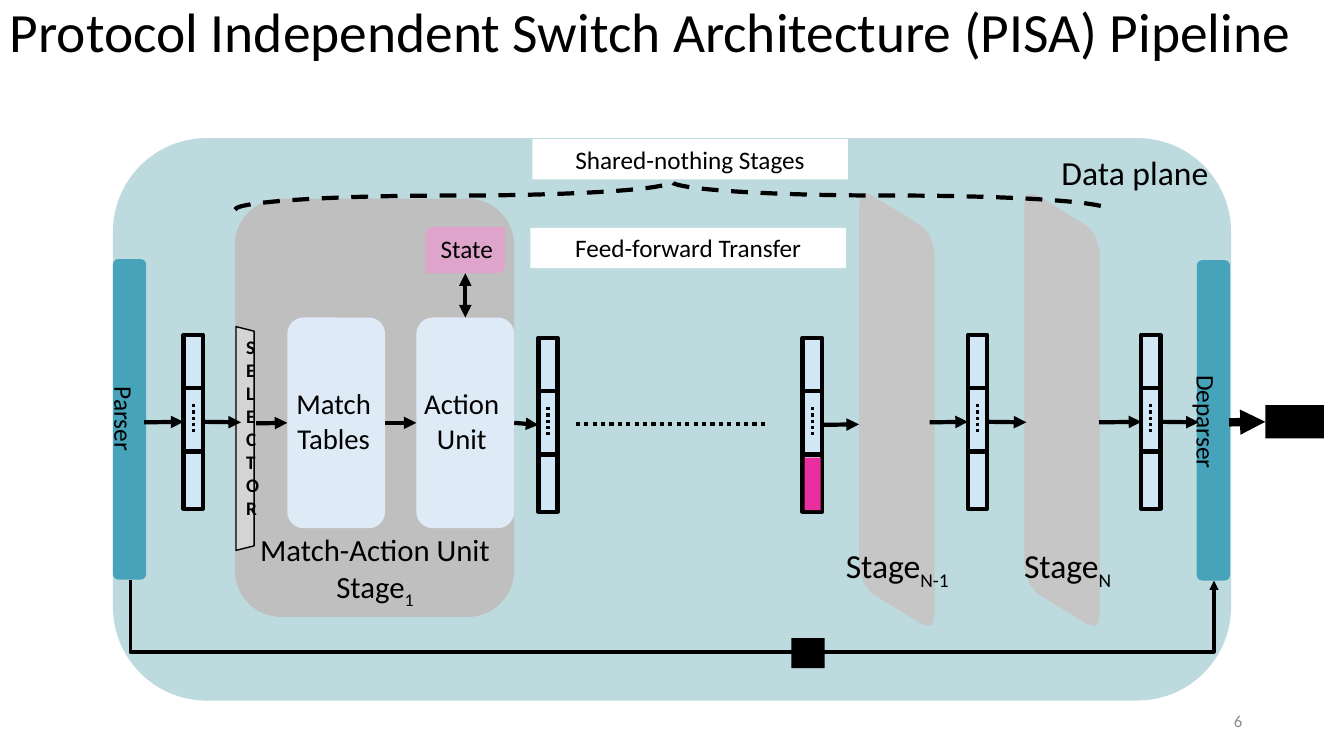
from pptx import Presentation
from pptx.dml.color import RGBColor
from pptx.enum.dml import MSO_LINE
from pptx.enum.shapes import MSO_CONNECTOR, MSO_SHAPE
from pptx.enum.text import MSO_ANCHOR, PP_ALIGN
from pptx.oxml.ns import qn
from pptx.util import Inches, Pt
from lxml.etree import SubElement

THEME = {
    "font": "Calibri",
    "ink": "000000", "paper": "FFFFFF", "note": "8C8C8C",
    "plane": "BDDADF", "edge": "47A3BA", "stage": "BFBFBF", "slab": "C6C6C6",
    "unit": "DEEBF7", "cell": "D1E7F6", "state": "FF8AD8", "mark": "EA2E9E",
    "title": 39.6, "end": 31.3, "large": 24, "mau": 22, "body": 20.5,
    "label": 18, "letter": 13.7, "small": 12,
    "thin": 1, "dots": 2.25, "line": 3, "thick": 6,
}
ROUND = MSO_SHAPE.FLOWCHART_ALTERNATE_PROCESS
RECT = MSO_SHAPE.RECTANGLE
TOP, LEFT, BOTTOM, RIGHT = range(4)

# name, preset, (left, top, width, height), fill
BLOCKS = [
    ("plane", MSO_SHAPE.ROUNDED_RECTANGLE, (1.12, 1.37, 11.09, 5.58), "plane"),
    ("parser", ROUND, (1.12, 2.57, 0.33, 3.18), "edge"),
    ("deparser", ROUND, (11.87, 2.58, 0.33, 3.18), "edge"),
    ("stage", ROUND, (2.33, 1.97, 2.77, 4.15), "stage"),
    ("state", MSO_SHAPE.ROUND_2_DIAG_RECTANGLE, (4.22, 2.25, 0.79, 0.46), "state"),
    ("match", ROUND, (2.85, 3.15, 0.97, 2.09), "unit"),
    ("action", ROUND, (4.13, 3.15, 0.97, 2.09), "unit"),
    ("selector", MSO_SHAPE.TRAPEZOID, (1.32, 4.26, 2.22, 0.18), "paper"),
    ("shared", RECT, (5.28, 1.38, 3.13, 0.4), "paper"),
    ("forward", RECT, (5.26, 2.26, 3.13, 0.4), "paper"),
    ("packet", RECT, (12.55, 4.02, 0.58, 0.33), "ink"),
]
SLABS = [8.52, 10.16]
OUTLINE = [(0, 0.1), (0.03, 0.01), (0.08, 0), (0.13, 0.02), (0.62, 0.32),
           (0.7, 0.41), (0.75, 0.57), (0.75, 4.16), (0.73, 4.27),
           (0.69, 4.29), (0.62, 4.27), (0.13, 3.97), (0.05, 3.87), (0, 3.72)]
HEADERS = {"h1": (1.82, 3.32), "h2": (5.34, 3.35), "h3": (7.96, 3.35),
           "h4": (9.6, 3.32), "h5": (11.32, 3.32)}
HEADER = (0.19, 1.73)
SPLITS = (0.53, 1.16)
DOTS = (0.69, 1.0)

# text, subscript, (left, top, width, height), size, rotation
TEXTS = [
    ("Data plane", "", (10.43, 1.46, 1.84, 0.5), "large", 0),
    ("Stage", "N-1", (8.02, 5.36, 1.76, 0.5), "large", 0),
    ("Stage", "N", (9.71, 5.36, 1.76, 0.5), "large", 0),
    ("", "Parser", (-0.21, 3.93, 3.18, 0.45), "end", 90),
    ("", "Deparser", (10.55, 3.96, 3.13, 0.45), "end", 90),
    ("State", "", (4.15, 2.27, 0.96, 0.4), "label", 0),
    ("Match Tables", "", (2.83, 3.78, 0.96, 0.79), "body", 0),
    ("Action Unit", "", (4.1, 3.78, 0.96, 0.79), "body", 0),
    ("Match-Action Unit Stage", "1", (2.12, 5.22, 3.2, 0.47), "mau", 0),
    ("Shared-nothing Stages", "", (5.28, 1.38, 3.13, 0.4), "label", 0),
    ("Feed-forward Transfer", "", (5.26, 2.26, 3.13, 0.4), "label", 0),
]
# each end is a point or a (block, side) pair
ARROWS = [
    ((1.43, 4.19), ("h1", LEFT)),
    (("h1", RIGHT), (2.39, 4.19)),
    ((2.54, 4.2), ("match", LEFT)),
    (("match", RIGHT), ("action", LEFT)),
    (("action", RIGHT), ("h2", LEFT)),
    (("h3", RIGHT), (8.52, 4.21)),
    ((9.22, 4.19), ("h4", LEFT)),
    (("h4", RIGHT), (10.18, 4.19)),
    ((10.9, 4.19), ("h5", LEFT)),
    (("h5", RIGHT), (11.89, 4.19)),
]

deck = Presentation()
deck.slide_width, deck.slide_height = Inches(13.33), Inches(7.5)
shapes = deck.slides.add_slide(deck.slide_layouts[6]).shapes
parts = {}


def color(key):
    return RGBColor.from_string(THEME[key])


def paint(shape, fill, line=None, width="line"):
    shape.shadow.inherit = False
    if fill:
        shape.fill.solid()
        shape.fill.fore_color.rgb = color(fill)
    else:
        shape.fill.background()
    if line:
        shape.line.color.rgb = color(line)
        shape.line.width = Pt(THEME[width])
    else:
        shape.line.fill.background()
    return shape


def block(kind, box, *style):
    return paint(shapes.add_shape(kind, *map(Inches, box)), *style)


def fade(shape, share):
    tone = shape.fill._xPr.find(qn("a:solidFill"))[0]
    SubElement(tone, qn("a:alpha")).set("val", str(share * 1000))


def write(text, box, size, sub="", turn=0, align=PP_ALIGN.CENTER,
          anchor=MSO_ANCHOR.TOP, tone="ink", bold=False):
    area = shapes.add_textbox(*map(Inches, box))
    area.rotation = turn
    frame = area.text_frame
    frame.word_wrap = True
    frame.vertical_anchor = anchor
    frame.text = text
    if sub:
        run = frame.paragraphs[0].add_run()
        run.text = sub
        run.font._element.set("baseline", "-25000")
    for para in frame.paragraphs:
        para.alignment = align
        for run in para.runs:
            font = run.font
            font.name, font.size, font.bold = THEME["font"], Pt(THEME[size]), bold
            font.color.rgb = color(tone)
    return frame


def link(start, end, width="line", tips=(), dash=None, kind=MSO_CONNECTOR.STRAIGHT):
    spots = [(0, 0) if isinstance(p[0], str) else p for p in (start, end)]
    wire = shapes.add_connector(kind, *(Inches(v) for p in spots for v in p))
    for spot, join in ((start, wire.begin_connect), (end, wire.end_connect)):
        if isinstance(spot[0], str):
            join(parts[spot[0]], spot[1])
    wire.line.color.rgb = color("ink")
    wire.line.width = Pt(THEME[width])
    if dash:
        wire.line.dash_style = dash
    for tip in tips:
        SubElement(wire.line._get_or_add_ln(), qn("a:" + tip)).set("type", "triangle")
    SubElement(wire._element.spPr, qn("a:effectLst"))
    return wire


def header(name, x, y):
    wide, high = HEADER
    parts[name] = block(RECT, (x, y, wide, high), "cell", "ink")
    mid = x + wide / 2
    link((mid, y + DOTS[0]), (mid, y + DOTS[1]), "dots", dash=MSO_LINE.ROUND_DOT)
    for split in SPLITS:
        link((x, y + split), (x + wide, y + split))


def slab(x, y=1.92):
    spots = [(Inches(x + a), Inches(y + b)) for a, b in OUTLINE]
    pen = shapes.build_freeform(*spots[0])
    pen.add_line_segments(spots[1:])
    paint(pen.convert_to_shape(), "slab")


def bypass():
    """Route from the parser's foot, under the stages, up to the deparser."""
    wire = link((6.66, 0.38), (6.67, 11.13), "dots", ["tailEnd"],
                kind=MSO_CONNECTOR.ELBOW)
    frame = wire._element.spPr.find(qn("a:xfrm"))
    frame.set("rot", "16200000")
    frame.set("flipH", "1")
    guide = SubElement(wire._element.spPr.find(qn("a:prstGeom")).find(qn("a:avLst")),
                       qn("a:gd"))
    guide.set("name", "adj1")
    guide.set("fmla", "val 7300000")
    block(RECT, (7.85, 6.33, 0.33, 0.3), "ink")


for name, kind, box, fill in BLOCKS:
    parts[name] = block(kind, box, fill)
fade(parts["state"], 50)
paint(parts["selector"], "paper", "ink", "thin").rotation = 90
fade(parts["selector"], 33)

for x in SLABS:
    slab(x)
for name, spot in HEADERS.items():
    header(name, *spot)
block(RECT, (7.98, 4.54, 0.16, 0.52), "mark")
link((5.71, 4.21), (7.6, 4.21), dash=MSO_LINE.ROUND_DOT)
bypass()

brace = block(MSO_SHAPE.LEFT_BRACE, (6.52, -2.39, 0.28, 8.66), None, "ink")
brace.rotation = 90
brace.adjustments[0], brace.adjustments[1] = 7.6, 0.5
brace.line.dash_style = MSO_LINE.DASH

for start, end in ARROWS:
    link(start, end, tips=["tailEnd"])
link(("state", BOTTOM), ("action", TOP), tips=["headEnd", "tailEnd"])
link((12.19, 4.19), ("packet", LEFT), "thick", ["tailEnd"])

for text, sub, box, size, turn in TEXTS:
    write(text, box, size, sub, turn,
          PP_ALIGN.LEFT if text == "Data plane" else PP_ALIGN.CENTER,
          MSO_ANCHOR.MIDDLE if turn else MSO_ANCHOR.TOP)
write("\n".join("SELECTOR"), (2.36, 3.28, 0.18, 1.94), "letter", bold=True)
title = write("Protocol Independent Switch Architecture (PISA) Pipeline",
              (0, 0, 13.33, 1.04), "title", align=PP_ALIGN.LEFT)
title.paragraphs[0].line_spacing = 0.9
write("6", (9.42, 6.95, 3, 0.4), "small", align=PP_ALIGN.RIGHT,
      anchor=MSO_ANCHOR.MIDDLE, tone="note")

deck.save("out.pptx")
